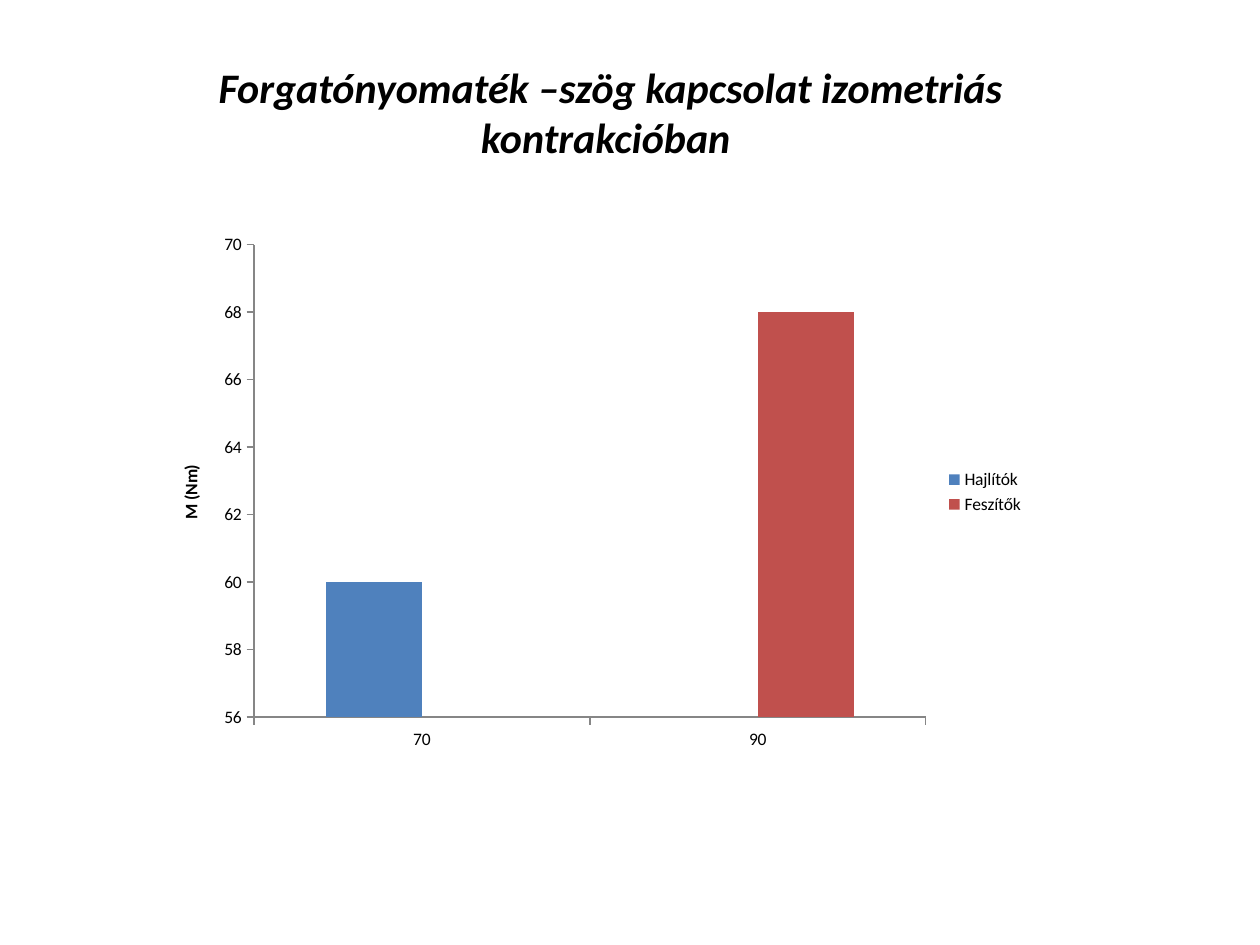
from dataclasses import dataclass

from pptx import Presentation
from pptx.chart.data import CategoryChartData
from pptx.dml.color import RGBColor
from pptx.enum.chart import XL_CHART_TYPE, XL_LEGEND_POSITION, XL_TICK_MARK
from pptx.enum.text import MSO_AUTO_SIZE, PP_ALIGN
from pptx.util import Emu, Pt

COLUMNS = XL_CHART_TYPE.COLUMN_CLUSTERED
LEGEND_RIGHT = XL_LEGEND_POSITION.RIGHT
TICK_OUTSIDE = XL_TICK_MARK.OUTSIDE
TICK_NONE = XL_TICK_MARK.NONE
CENTER = PP_ALIGN.CENTER
GROW = MSO_AUTO_SIZE.SHAPE_TO_FIT_TEXT
EMU_PER_PX = 914400 / 126


@dataclass(frozen=True)
class Theme:
    """Colours, font and type sizes of the slide."""
    font: str = "Calibri"
    text: str = "000000"
    axis: str = "868686"
    flexors: str = "4F81BD"
    extensors: str = "C0504D"
    title_size: int = 24
    chart_size: int = 10


THEME = Theme()


def px(length):
    """Turn pixels into EMU."""
    return Emu(round(length * EMU_PER_PX))


def style_font(font, size, bold=False, italic=False):
    """Set the theme font with the given size and emphasis."""
    font.name = THEME.font
    font.size = Pt(size)
    font.bold = bold
    font.italic = italic
    font.color.rgb = RGBColor.from_string(THEME.text)


def add_title(page, text, bounds):
    """Add the centred slide title."""
    box = page.shapes.add_textbox(*map(px, bounds))
    frame = box.text_frame
    frame.word_wrap = True
    frame.auto_size = GROW
    para = frame.paragraphs[0]
    para.text = text
    para.alignment = CENTER
    style_font(para.font, THEME.title_size, bold=True, italic=True)


def style_axis(axis):
    """Give an axis outside ticks, a thin line and no gridlines."""
    axis.has_major_gridlines = False
    axis.major_tick_mark = TICK_OUTSIDE
    axis.minor_tick_mark = TICK_NONE
    axis.format.line.color.rgb = RGBColor.from_string(THEME.axis)
    axis.format.line.width = Pt(0.75)


def add_column_chart(page, categories, series, axis_title, bounds):
    """Add a clustered column chart with a legend on the right."""
    data = CategoryChartData()
    data.categories = categories
    for name, values, _ in series:
        data.add_series(name, values)
    chart = page.shapes.add_chart(COLUMNS, *map(px, bounds), data).chart
    style_font(chart.font, THEME.chart_size)
    chart.has_title = False
    chart.has_legend = True
    chart.legend.position = LEGEND_RIGHT
    chart.legend.include_in_layout = False

    style_axis(chart.category_axis)
    style_axis(chart.value_axis)
    para = chart.value_axis.axis_title.text_frame.paragraphs[0]
    para.text = axis_title
    style_font(para.font, THEME.chart_size, bold=True)

    plot = chart.plots[0]
    plot.vary_by_categories = False
    plot.gap_width = 150
    for columns, (_, _, color) in zip(plot.series, series):
        columns.format.fill.solid()
        columns.format.fill.fore_color.rgb = RGBColor.from_string(color)


def main():
    """Build the torque and angle slide."""
    deck = Presentation()
    deck.slide_width, deck.slide_height = px(1260), px(945)
    page = deck.slides.add_slide(deck.slide_layouts[6])
    series = [
        ("Hajlítók", (60, None), THEME.flexors),
        ("Feszítők", (None, 68), THEME.extensors),
    ]
    add_column_chart(page, ["70", "90"], series, "M (Nm)", (154, 224, 883, 536))
    title = "Forgatónyomaték –szög kapcsolat izometriás kontrakcióban "
    add_title(page, title, (174, 55, 873, 115))
    deck.save("out.pptx")


if __name__ == "__main__":
    main()
